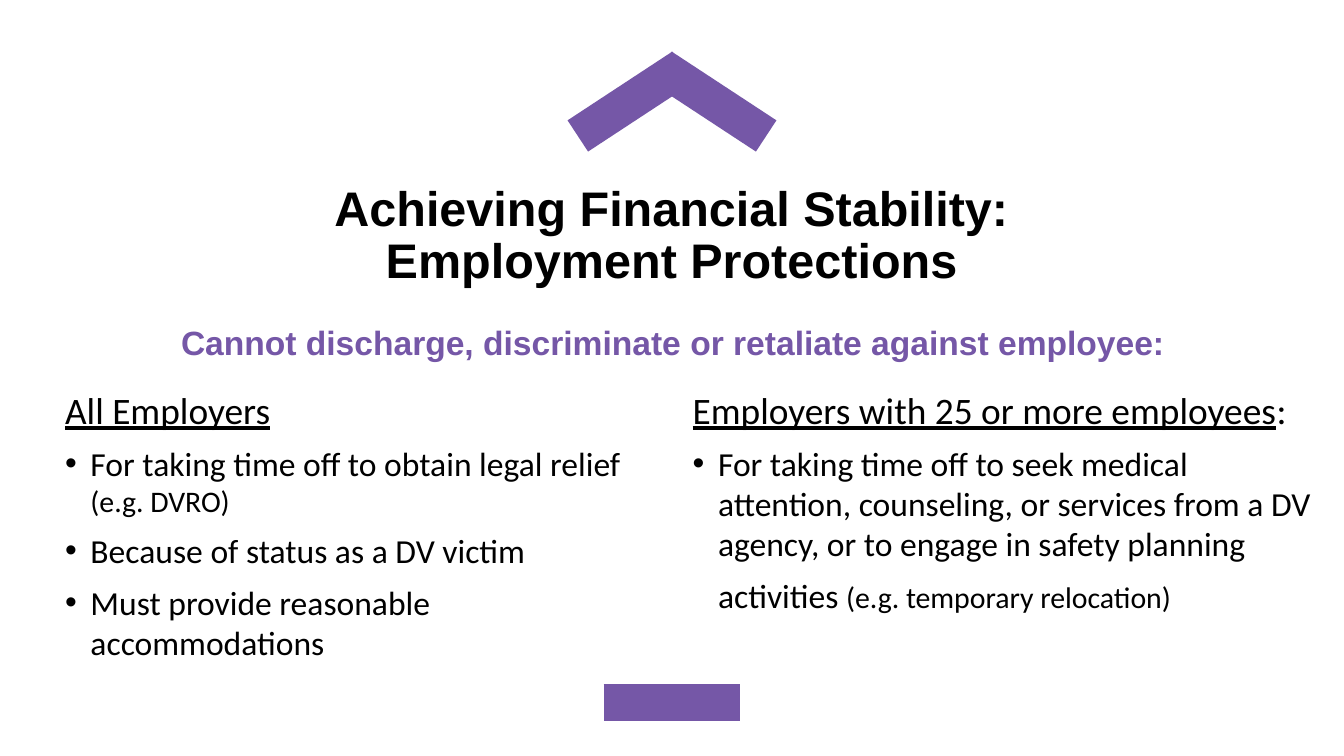
"""Build a slide on employment protections, with two columns of bullets under a chevron."""
from lxml import etree
from pptx import Presentation
from pptx.dml.color import RGBColor
from pptx.enum.shapes import MSO_CONNECTOR
from pptx.enum.text import MSO_ANCHOR, MSO_AUTO_SIZE, PP_ALIGN
from pptx.oxml.ns import qn
from pptx.util import Cm, Pt

PURPLE = RGBColor(0x75, 0x57, 0xA7)
BLACK = RGBColor(0x00, 0x00, 0x00)
STRAIGHT = MSO_CONNECTOR.STRAIGHT
CENTER = PP_ALIGN.CENTER
TOP = MSO_ANCHOR.TOP
MIDDLE = MSO_ANCHOR.MIDDLE
NO_AUTOFIT = MSO_AUTO_SIZE.NONE
TWO_CONTENT = 3
INDENT = Cm(0.48)


def place_text(shape, left, top, width, height, anchor):
    shape.left, shape.top, shape.width, shape.height = Cm(left), Cm(top), Cm(width), Cm(height)
    text_frame = shape.text_frame
    text_frame.word_wrap = True
    text_frame.auto_size = NO_AUTOFIT
    text_frame.vertical_anchor = anchor
    text_frame.margin_left = text_frame.margin_right = Cm(0.19)
    text_frame.margin_top = text_frame.margin_bottom = Cm(0.1)
    return text_frame


def format_run(run, font_name, size, color, bold=False, underline=False):
    run.font.name = font_name
    run.font.size = Pt(size)
    run.font.color.rgb = color
    run.font.bold = bold
    run.font.underline = underline


presentation = Presentation()
presentation.slide_width = Cm(25.4)
presentation.slide_height = Cm(14.29)
slide = presentation.slides.add_slide(presentation.slide_layouts[TWO_CONTENT])
title, left_body, right_body = slide.placeholders

subtitle = slide.shapes.add_textbox(0, 0, 0, 0)
headlines = [
    (title, (1.75, 3.02, 21.9, 2.9), MIDDLE, 26, BLACK,
     "Achieving Financial Stability:\vEmployment Protections"),
    (subtitle, (2.57, 6.07, 20.3, 1.17), TOP, 18, PURPLE,
     "Cannot discharge, discriminate or retaliate against employee:"),
]
for shape, box, anchor, size, color, text in headlines:
    text_frame = place_text(shape, *box, anchor)
    text_frame.text = text
    paragraph = text_frame.paragraphs[0]
    paragraph.alignment = CENTER
    paragraph.line_spacing = 0.9
    for run in paragraph.runs:
        format_run(run, "Arial", size, color, bold=True)

columns = [
    (left_body, (1.04, 7.21, 11.46, 6.07), [
        [("All Employers", 20, True)],
        [("For taking time off to obtain legal relief ", 18, False), ("(e.g. DVRO)", 16, False)],
        [("Because of status as a DV victim", 18, False)],
        [("Must provide reasonable accommodations", 18, False)],
    ]),
    (right_body, (12.9, 7.21, 12.12, 5.92), [
        [("Employers with 25 or more employees", 20, True), (":", 20, False)],
        [("For taking time off to seek medical attention, counseling, or services from a DV "
          "agency, or to engage in safety planning activities ", 18, False),
         ("(e.g. temporary relocation)", 16, False), ("\t", 24, False)],
    ]),
]
for shape, box, paragraphs in columns:
    text_frame = place_text(shape, *box, TOP)
    for index, pieces in enumerate(paragraphs):
        paragraph = text_frame.add_paragraph() if index else text_frame.paragraphs[0]
        properties = paragraph._p.get_or_add_pPr()
        properties.set("marL", str(INDENT if index else 0))
        properties.set("indent", str(-INDENT if index else 0))
        if index:
            etree.SubElement(properties, qn("a:buChar")).set("char", "•")
        else:
            etree.SubElement(properties, qn("a:buNone"))
        paragraph.space_before = Pt(6 if index else 0)
        for text, size, underline in pieces:
            run = paragraph.add_run()
            run.text = text
            format_run(run, "Calibri", size, BLACK, underline=underline)

strokes = [
    (12.5, 1.27, 14.48, 2.57),
    (12.9, 1.27, 10.92, 2.57),
    (11.41, 13.28, 13.99, 13.28),
]
for stroke in strokes:
    connector = slide.shapes.add_connector(STRAIGHT, *map(Cm, stroke))
    connector.line.color.rgb = PURPLE
    connector.line.width = Pt(20)
    etree.SubElement(connector._element.spPr, qn("a:effectLst"))

presentation.save("out.pptx")
